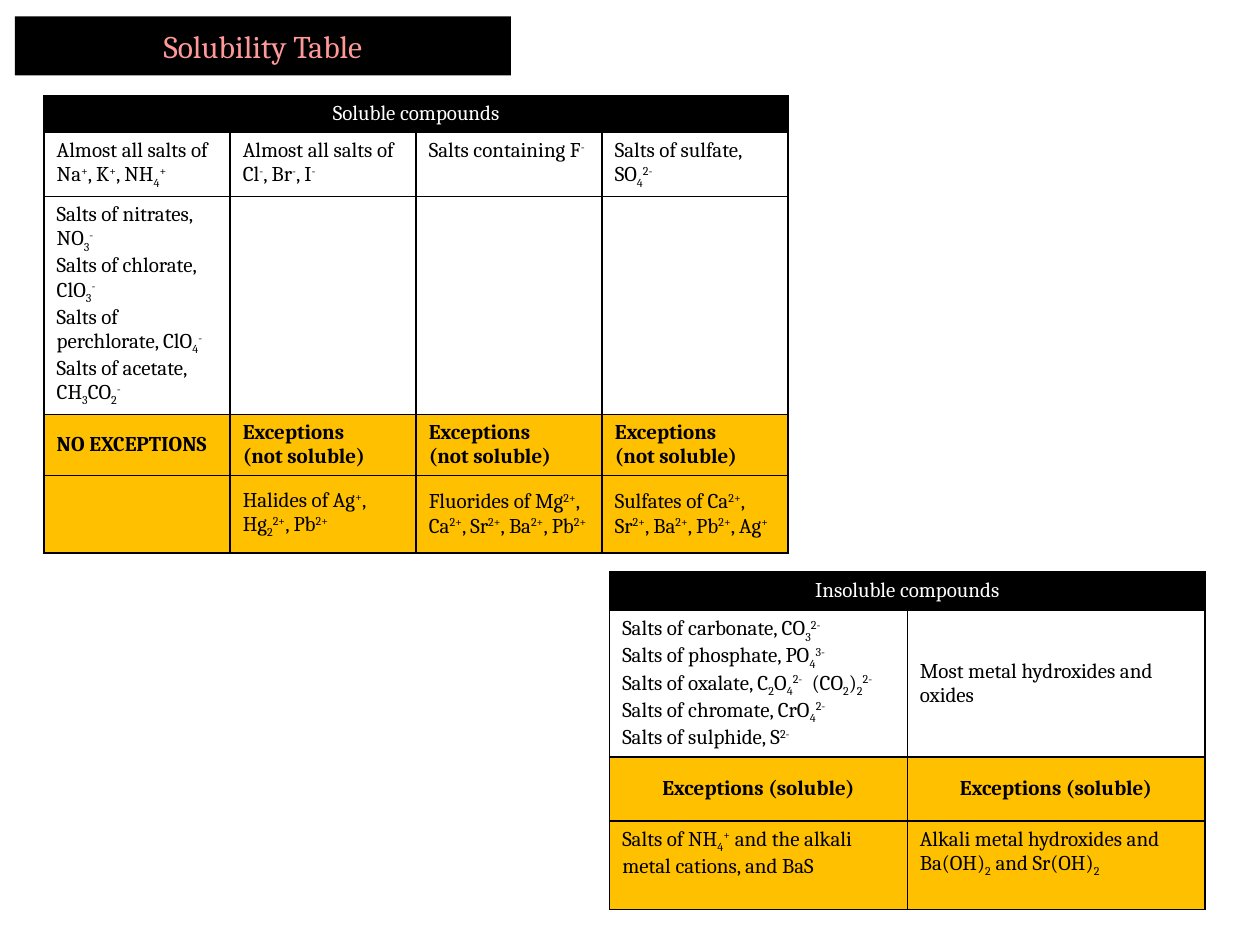
from dataclasses import dataclass

from lxml import etree
from pptx import Presentation
from pptx.dml.color import RGBColor
from pptx.enum import shapes, text
from pptx.oxml.ns import qn
from pptx.util import Cm, Pt


@dataclass(frozen=True)
class Theme:
    font: str = "Cambria"
    title_size: int = 18
    body_size: int = 12
    ink: str = "000000"
    paper: str = "FFFFFF"
    title: str = "FF9999"
    exception: str = "FFC000"
    border_width: int = 1


@dataclass(frozen=True)
class Entry:
    """Cell content; ^ toggles superscript and _ toggles subscript."""
    lines: tuple[str, ...] = ()
    fill: str | None = None
    color: str = Theme.ink
    bold: bool = False
    centred: bool = False
    middle: bool = False


@dataclass(frozen=True)
class Grid:
    left: float
    top: float
    column_width: float
    row_heights: tuple[float, ...]
    rows: tuple[tuple[Entry, ...], ...]


THEME = Theme()
BASELINES = {"^": "30000", "_": "-25000"}


def plain(*lines: str, middle: bool = False) -> Entry:
    return Entry(lines, middle=middle)


def header(line: str) -> Entry:
    return Entry((line,), THEME.ink, THEME.paper, centred=True)


def exception(*lines: str, **style: bool) -> Entry:
    return Entry(lines, THEME.exception, **style)


NOT_SOLUBLE = exception("Exceptions", "(not soluble)", bold=True)
BUT_SOLUBLE = exception("Exceptions (soluble)", bold=True, centred=True, middle=True)

SOLUBLE = Grid(0.89, 1.93, 3.75, (0.72, 1.12, 3.86, 1.12, 1.57), (
    (header("Soluble compounds"),),
    (plain("Almost all salts of Na^+^, K^+^, NH_4_^+^"),
     plain("Almost all salts of Cl^-^, Br^-^, I^-^"),
     plain("Salts containing F^-^"),
     plain("Salts of sulfate, SO_4_^2-^")),
    (plain("Salts of nitrates, NO_3_^-^",
           "Salts of chlorate, ClO_3_^-^",
           "Salts of perchlorate, ClO_4_^-^",
           "Salts of acetate, CH_3_CO_2_^-^"),
     plain(), plain(), plain()),
    (exception("NO EXCEPTIONS", bold=True, middle=True),
     NOT_SOLUBLE, NOT_SOLUBLE, NOT_SOLUBLE),
    (exception(),
     exception("Halides of Ag^+^, Hg_2_^2+^, Pb^2+^", middle=True),
     exception("Fluorides of Mg^2+^, Ca^2+^, Sr^2+^, Ba^2+^, Pb^2+^", middle=True),
     exception("Sulfates of Ca^2+^, Sr^2+^, Ba^2+^, Pb^2+^, Ag^+^", middle=True)),
))

INSOLUBLE = Grid(12.29, 11.53, 6, (0.78, 2.95, 1.29, 1.78), (
    (header("Insoluble compounds"),),
    (plain("Salts of carbonate, CO_3_^2-^",
           "Salts of phosphate, PO_4_^3-^",
           "Salts of oxalate, C_2_O_4_^2-^  (CO_2_)_2_^2-^",
           "Salts of chromate, CrO_4_^2-^",
           "Salts of sulphide, S^2-^"),
     plain("Most metal hydroxides and oxides", middle=True)),
    (BUT_SOLUBLE, BUT_SOLUBLE),
    (exception("Salts of NH_4_^+^ and the alkali metal cations, and BaS"),
     exception("Alkali metal hydroxides and Ba(OH)_2_ and Sr(OH)_2_")),
))


def split_spans(line: str) -> list[tuple[str, str]]:
    """Cut a marked line into (words, mark) pairs."""
    spans, words, mark = [], "", ""
    for letter in line:
        if letter in BASELINES:
            spans.append((words, mark))
            words, mark = "", "" if mark else letter
        else:
            words += letter
    return [pair for pair in spans + [(words, mark)] if pair[0]]


def write_lines(frame, entry: Entry, size: int) -> None:
    for index, line in enumerate(entry.lines):
        para = frame.add_paragraph() if index else frame.paragraphs[0]
        para.alignment = text.PP_ALIGN.CENTER if entry.centred else text.PP_ALIGN.LEFT
        for words, mark in split_spans(line):
            span = para.add_run()
            span.text = words
            span.font.name = THEME.font
            span.font.size = Pt(size)
            span.font.bold = entry.bold
            span.font.color.rgb = RGBColor.from_string(entry.color)
            if mark:
                span._r.get_or_add_rPr().set("baseline", BASELINES[mark])


def draw_borders(cell) -> None:
    properties = cell._tc.get_or_add_tcPr()
    for side in ("a:lnL", "a:lnR", "a:lnT", "a:lnB"):
        line = etree.SubElement(properties, qn(side), w=str(Pt(THEME.border_width)))
        fill = etree.SubElement(line, qn("a:solidFill"))
        etree.SubElement(fill, qn("a:srgbClr"), val=THEME.ink)


def fill_cell(cell, entry: Entry) -> None:
    if entry.fill:
        cell.fill.solid()
        cell.fill.fore_color.rgb = RGBColor.from_string(entry.fill)
    else:
        cell.fill.background()
    cell.vertical_anchor = text.MSO_ANCHOR.MIDDLE if entry.middle else text.MSO_ANCHOR.TOP
    write_lines(cell.text_frame, entry, THEME.body_size)


def draw_grid(page, grid: Grid) -> None:
    columns = max(len(row) for row in grid.rows)
    table = page.shapes.add_table(
        len(grid.rows), columns, Cm(grid.left), Cm(grid.top),
        Cm(grid.column_width * columns), Cm(sum(grid.row_heights))).table
    table.first_row = table.horz_banding = False
    for column in table.columns:
        column.width = Cm(grid.column_width)
    for row, height in zip(table.rows, grid.row_heights):
        row.height = Cm(height)
    for cell in table.iter_cells():
        draw_borders(cell)
    # The header spans the whole width
    table.cell(0, 0).merge(table.cell(0, columns - 1))
    for row_index, row in enumerate(grid.rows):
        for column_index, entry in enumerate(row):
            fill_cell(table.cell(row_index, column_index), entry)


def draw_title(page, line: str) -> None:
    box = page.shapes.add_shape(shapes.MSO_SHAPE.RECTANGLE,
                                Cm(0.3), Cm(0.33), Cm(10), Cm(1.19))
    box.shadow.inherit = False
    box.fill.solid()
    box.fill.fore_color.rgb = RGBColor.from_string(THEME.ink)
    box.line.fill.background()
    box.text_frame.word_wrap = True
    box.text_frame.vertical_anchor = text.MSO_ANCHOR.MIDDLE
    write_lines(box.text_frame, Entry((line,), color=THEME.title, centred=True),
                THEME.title_size)


def main() -> None:
    deck = Presentation()
    deck.slide_width, deck.slide_height = Cm(25.4), Cm(19.05)
    page = deck.slides.add_slide(deck.slide_layouts[6])
    # Title bar
    draw_title(page, "Solubility Table")
    # Tables
    for grid in (SOLUBLE, INSOLUBLE):
        draw_grid(page, grid)
    deck.save("out.pptx")


if __name__ == "__main__":
    main()
